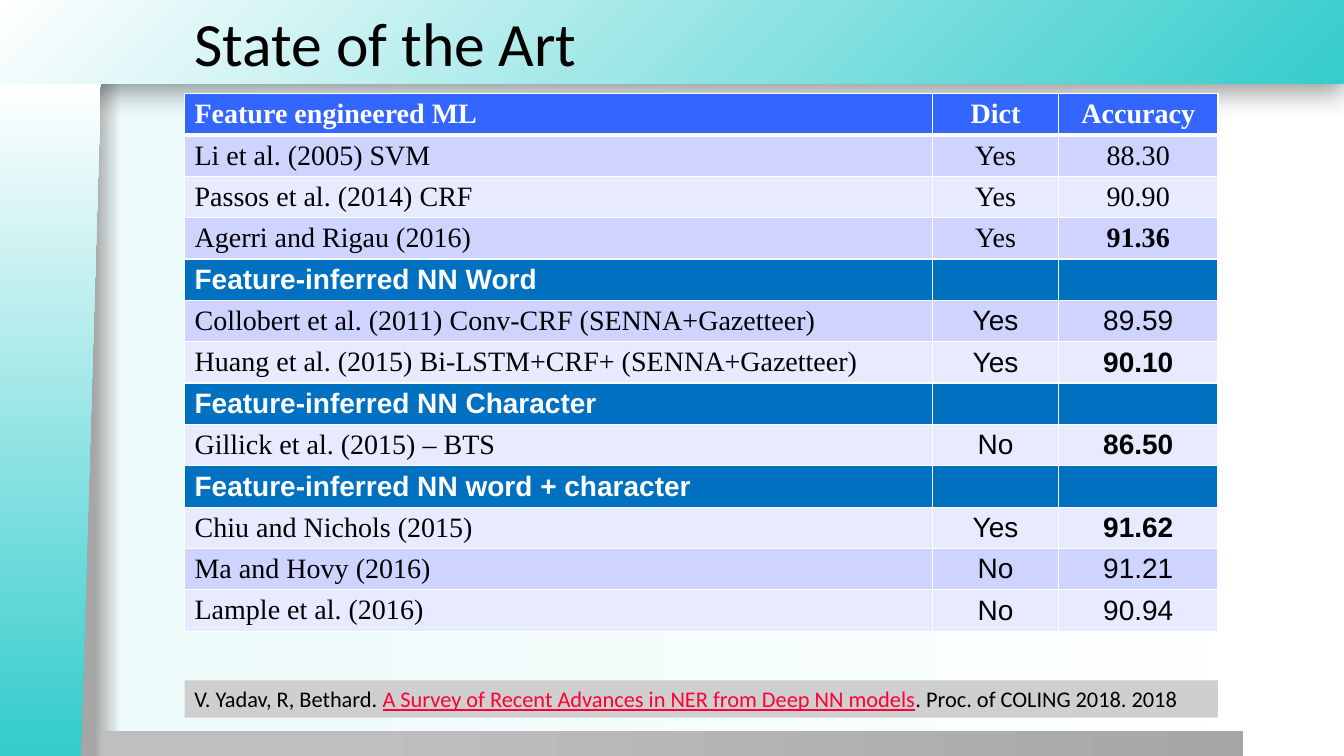
"""Build the "State of the Art" slide with its table of NER results."""
from lxml import etree
from pptx import Presentation
from pptx.dml.color import RGBColor
from pptx.enum.shapes import MSO_SHAPE
from pptx.enum.text import MSO_ANCHOR, MSO_AUTO_SIZE, PP_ALIGN
from pptx.oxml.ns import qn
from pptx.util import Inches, Pt

LEFT, CENTER = PP_ALIGN.LEFT, PP_ALIGN.CENTER
MIDDLE = MSO_ANCHOR.MIDDLE
RECTANGLE = MSO_SHAPE.RECTANGLE
MANUAL_INPUT = MSO_SHAPE.FLOWCHART_MANUAL_INPUT

BLACK = RGBColor(0x00, 0x00, 0x00)
WHITE = RGBColor(0xFF, 0xFF, 0xFF)
TEAL = RGBColor(0x34, 0xCC, 0xCC)
PALE_TEAL = RGBColor(0xED, 0xFB, 0xFB)
EDGE_GRAY = RGBColor(0xA6, 0xA6, 0xA6)
FOOT_LIGHT = RGBColor(0xBF, 0xBF, 0xBF)
FOOT_DARK = RGBColor(0xA7, 0xA7, 0xA7)
CITATION_GRAY = RGBColor(0xCF, 0xCF, 0xCF)
HEADER_BLUE = RGBColor(0x33, 0x66, 0xFF)
SECTION_BLUE = RGBColor(0x00, 0x70, 0xC0)
BANDS = (RGBColor(0xE8, 0xEA, 0xFF), RGBColor(0xCE, 0xD3, 0xFF))
LINK_RED = RGBColor(0xFF, 0x00, 0x33)

SERIF, SANS, TITLE_FONT = "Times New Roman", "Arial", "Calibri"

TITLE = "State of the Art"
SECTIONS = [
    (("Feature engineered ML", "Dict", "Accuracy"), [
        ("Li et al. (2005) SVM", "Yes", "88.30"),
        ("Passos et al. (2014) CRF", "Yes", "90.90"),
        ("Agerri and Rigau (2016)", "Yes", "91.36"),
    ]),
    (("Feature-inferred NN Word", "", ""), [
        ("Collobert et al. (2011) Conv-CRF (SENNA+Gazetteer)", "Yes", "89.59"),
        ("Huang et al. (2015) Bi-LSTM+CRF+ (SENNA+Gazetteer)", "Yes", "90.10"),
    ]),
    (("Feature-inferred NN Character", "", ""), [
        ("Gillick et al. (2015) – BTS", "No", "86.50"),
    ]),
    (("Feature-inferred NN word + character", "", ""), [
        ("Chiu and Nichols (2015)", "Yes", "91.62"),
        ("Ma and Hovy (2016)", "No", "91.21"),
        ("Lample et al. (2016)", "No", "90.94"),
    ]),
]
CITATION = [
    ("V. Yadav, R, Bethard. ", BLACK, False),
    ("A Survey of Recent Advances in NER from Deep NN models", LINK_RED, True),
    (". Proc. of COLING 2018. 2018", BLACK, False),
]

CONTENT_LEFT, CONTENT_WIDTH = 1.83, 10.25
COLUMN_WIDTHS = (7.42, 1.25, 1.58)
TABLE_TOP, ROW_HEIGHT = 0.93, 0.41


def add_text(paragraph, text, font, size, color, bold=False, underline=False, align=LEFT):
    paragraph.alignment = align
    run = paragraph.add_run()
    run.text = text
    run.font.name = font
    run.font.size = Pt(size)
    run.font.color.rgb = color
    run.font.bold = bold
    run.font.underline = underline


def set_gradient(fill, owner, stops, corner=False):
    fill.gradient()
    gradient = owner.find(".//" + qn("a:gradFill"))
    stop_list = gradient.find(qn("a:gsLst"))
    for stop in list(stop_list):
        stop_list.remove(stop)
    for position, color in stops:
        stop = etree.SubElement(stop_list, qn("a:gs"), pos=str(position * 1000))
        etree.SubElement(stop, qn("a:srgbClr"), val=str(color))
    linear = gradient.find(qn("a:lin"))
    if corner:
        gradient.remove(linear)
        circle = etree.SubElement(gradient, qn("a:path"))
        circle.set("path", "circle")
        etree.SubElement(circle, qn("a:fillToRect"), l="100000", t="100000")
    else:
        linear.set("ang", "0")


def add_panel(slide, kind, left, top, width, height):
    shape = slide.shapes.add_shape(
        kind, Inches(left), Inches(top), Inches(width), Inches(height))
    shape.shadow.inherit = False
    shape.line.fill.background()
    return shape


def add_drop_shadow(shape):
    effects = shape._element.spPr.find(qn("a:effectLst"))
    shadow = etree.SubElement(
        effects, qn("a:outerShdw"), blurRad=str(Pt(20)), dist=str(Pt(6)),
        dir="5400000", algn="t", rotWithShape="0")
    color = etree.SubElement(shadow, qn("a:srgbClr"), val=str(BLACK))
    etree.SubElement(color, qn("a:alpha"), val="40000")


def set_borders(cell, bottom_width):
    properties = cell._tc.get_or_add_tcPr()
    for side, width in (("L", 1), ("R", 1), ("T", 1), ("B", bottom_width)):
        line = etree.SubElement(properties, qn("a:ln" + side), w=str(Pt(width)))
        solid = etree.SubElement(line, qn("a:solidFill"))
        etree.SubElement(solid, qn("a:srgbClr"), val=str(WHITE))


def add_backdrop(slide):
    set_gradient(slide.background.fill, slide._element,
                 [(7, EDGE_GRAY), (9, PALE_TEAL), (100, WHITE)])
    top_bar = add_panel(slide, RECTANGLE, -0.01, 0, 13.34, 0.83)
    set_gradient(top_bar.fill, top_bar._element, [(0, TEAL), (100, WHITE)], corner=True)
    add_drop_shadow(top_bar)
    foot_bar = add_panel(slide, RECTANGLE, 1, 7.25, 11.33, 0.26)
    set_gradient(foot_bar.fill, foot_bar._element, [(20, FOOT_LIGHT), (100, FOOT_DARK)])
    side_bar = add_panel(slide, MANUAL_INPUT, -2.84, 3.67, 6.68, 1)
    set_gradient(side_bar.fill, side_bar._element, [(1, TEAL), (100, WHITE)])
    side_bar.rotation = 270
    side_bar._element.spPr.find(qn("a:xfrm")).set("flipV", "1")


def add_title(slide):
    title = slide.shapes.title
    slide.shapes._spTree.append(title._element)
    title.left, title.top = Inches(CONTENT_LEFT), Inches(0)
    title.width, title.height = Inches(11.51), Inches(0.83)
    title.text_frame.vertical_anchor = MIDDLE
    add_text(title.text_frame.paragraphs[0], TITLE, TITLE_FONT, 44, BLACK)


def add_results(slide):
    rows = []
    for section, (heading, entries) in enumerate(SECTIONS):
        rows.append((heading, section, True))
        rows.extend((entry, section, False) for entry in entries)
    best = {max(entry[2] for entry in entries) for _, entries in SECTIONS}
    table = slide.shapes.add_table(
        len(rows), len(COLUMN_WIDTHS), Inches(CONTENT_LEFT), Inches(TABLE_TOP),
        Inches(CONTENT_WIDTH), Inches(ROW_HEIGHT * len(rows))).table
    table.first_row = table.horz_banding = False
    for column, width in zip(table.columns, COLUMN_WIDTHS):
        column.width = Inches(width)
    for row_index, (values, section, is_heading) in enumerate(rows):
        table.rows[row_index].height = Inches(ROW_HEIGHT)
        if is_heading:
            background = SECTION_BLUE if section else HEADER_BLUE
        else:
            background = BANDS[row_index % 2]
        for column_index, value in enumerate(values):
            cell = table.cell(row_index, column_index)
            set_borders(cell, 1 if row_index else 3)
            cell.fill.solid()
            cell.fill.fore_color.rgb = background
            cell.vertical_anchor = MIDDLE
            if value:
                sans = section and (is_heading or column_index)
                add_text(cell.text_frame.paragraphs[0], value,
                         SANS if sans else SERIF, 20,
                         WHITE if is_heading else BLACK,
                         bold=is_heading or value in best,
                         align=CENTER if column_index else LEFT)


def add_citation(slide):
    box = add_panel(slide, RECTANGLE, CONTENT_LEFT, 6.75, CONTENT_WIDTH, 0.37)
    box.fill.solid()
    box.fill.fore_color.rgb = CITATION_GRAY
    frame = box.text_frame
    frame.word_wrap = True
    frame.auto_size = MSO_AUTO_SIZE.SHAPE_TO_FIT_TEXT
    frame.vertical_anchor = MSO_ANCHOR.TOP
    for text, color, underline in CITATION:
        add_text(frame.paragraphs[0], text, TITLE_FONT, 16, color, underline=underline)


def main():
    presentation = Presentation()
    presentation.slide_width, presentation.slide_height = Inches(13.33), Inches(7.5)
    slide = presentation.slides.add_slide(presentation.slide_layouts[5])
    add_backdrop(slide)
    add_title(slide)
    add_results(slide)
    add_citation(slide)
    presentation.save("out.pptx")


if __name__ == "__main__":
    main()
